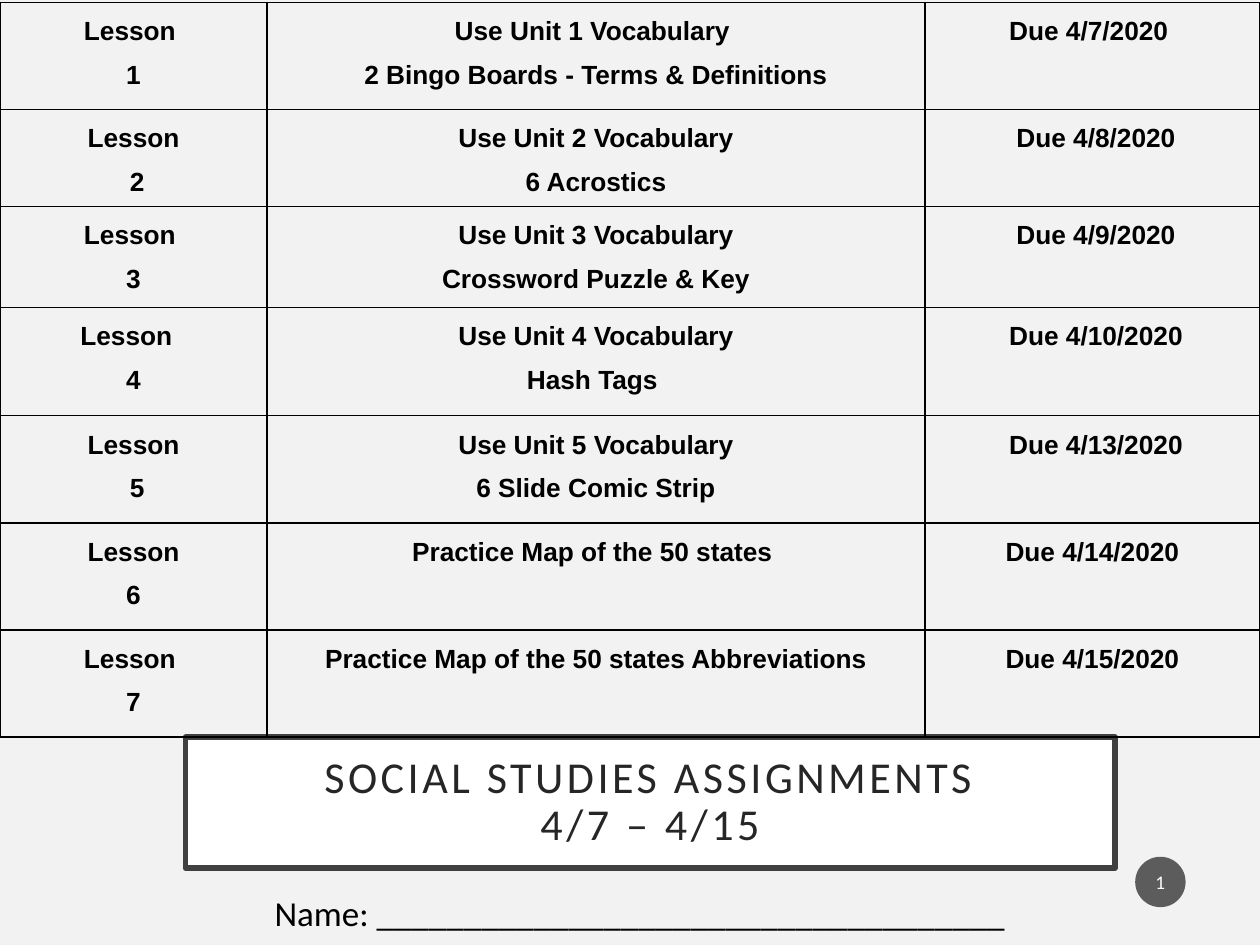
from lxml.etree import SubElement as Sub
from pptx import Presentation
from pptx.dml.color import RGBColor
from pptx.enum.shapes import MSO_SHAPE as Shape
from pptx.enum.text import MSO_ANCHOR as Anchor, PP_ALIGN as Align
from pptx.oxml.ns import qn
from pptx.util import Pt

COLORS = {"page": "F2F2F2", "white": "FFFFFF", "frame": "404040",
          "title": "262626", "badge": "1D1D1D", "black": "000000"}

COLS = [152.64, 375.84, 191.52]
ROWS = [61.2, 55.44, 57.6, 61.92, 61.2, 61.2, 61.2]
LESSONS = [
    ("Lesson \n1", "Use Unit 1 Vocabulary \n2 Bingo Boards - Terms & Definitions", "Due 4/7/2020 "),
    ("Lesson\n 2", "Use Unit 2 Vocabulary\n6 Acrostics", " Due 4/8/2020"),
    ("Lesson \n3", "Use Unit 3 Vocabulary\nCrossword Puzzle & Key", " Due 4/9/2020"),
    ("Lesson  \n4", "Use Unit 4 Vocabulary\nHash Tags ", " Due 4/10/2020"),
    ("Lesson\n 5", "Use Unit 5 Vocabulary\n6 Slide Comic Strip", " Due 4/13/2020"),
    ("Lesson\n6", "Practice Map of the 50 states ", "Due 4/14/2020"),
    ("Lesson \n7", "Practice Map of the 50 states Abbreviations", "Due 4/15/2020"),
]


def rgb(name):
    return RGBColor.from_string(COLORS[name])


def pad(item, side, top):
    """Set equal side margins and equal top and bottom margins."""
    item.margin_left = item.margin_right = Pt(side)
    item.margin_top = item.margin_bottom = Pt(top)


def write(frame, text, size, color, face="Calibri", bold=False, gap=None):
    frame.text = text
    for para in frame.paragraphs:
        para.alignment = Align.CENTER
        para.line_spacing = gap
        font = para.font
        font.name, font.size, font.bold = face, Pt(size), bold
        font.color.rgb = rgb(color)


def add_border(cell):
    props = cell._tc.get_or_add_tcPr()
    for spot, side in enumerate(("lnL", "lnR", "lnT", "lnB")):
        line = props.makeelement(qn(f"a:{side}"), {"w": str(Pt(1))})
        fill = Sub(line, qn("a:solidFill"))
        Sub(fill, qn("a:srgbClr"), val=COLORS["black"])
        props.insert(spot, line)


def add_plan(slide, x, y):
    """Place the table of lessons, tasks and due dates."""
    table = slide.shapes.add_table(len(ROWS), len(COLS), Pt(x), Pt(y),
                                   Pt(sum(COLS)), Pt(sum(ROWS))).table
    table.first_row = table.horz_banding = False
    for col, width in zip(table.columns, COLS):
        col.width = Pt(width)
    for row, height, lesson in zip(table.rows, ROWS, LESSONS):
        row.height = Pt(height)
        for cell, text in zip(row.cells, lesson):
            cell.fill.background()
            pad(cell, 2.16, 0)
            write(cell.text_frame, text, 15, "black", "Arial", True, 1.5)
            add_border(cell)


def add_form(slide, kind, x, y, w, h, fill):
    form = slide.shapes.add_shape(kind, Pt(x), Pt(y), Pt(w), Pt(h))
    form.shadow.inherit = False
    form.fill.solid()
    form.fill.fore_color.rgb = rgb(fill)
    form.text_frame.word_wrap = True
    form.text_frame.vertical_anchor = Anchor.MIDDLE
    return form


def add_title(slide, x, y, w, h):
    form = add_form(slide, Shape.RECTANGLE, x, y, w, h, "white")
    form.line.color.rgb = rgb("frame")
    form.line.width = Pt(3)
    frame = form.text_frame
    pad(frame, 21.6, 14.4)
    write(frame, "SOCIAL STUDIES ASSIGNMENTS\v4/7 – 4/15", 25.2, "title", gap=0.9)
    for run in frame.paragraphs[0].runs:
        run.font._element.set("spc", "200")


def add_badge(slide, x, y, size):
    """Place the round page number."""
    form = add_form(slide, Shape.OVAL, x, y, size, size, "badge")
    form.line.fill.background()
    tint = form._element.spPr.find(qn("a:solidFill"))[0]
    Sub(tint, qn("a:alpha"), val="70000")
    pad(form.text_frame, 1.44, 3.6)
    write(form.text_frame, "1", 11, "white")


def add_name(slide, x, y, w, h):
    frame = slide.shapes.add_textbox(Pt(x), Pt(y), Pt(w), Pt(h)).text_frame
    frame.word_wrap = False
    write(frame, "Name: " + "_" * 36, 20, "black")


def main():
    deck = Presentation()
    deck.slide_width, deck.slide_height = Pt(720), Pt(540)
    slide = deck.slides.add_slide(deck.slide_layouts[6])
    slide.background.fill.solid()
    slide.background.fill.fore_color.rgb = rgb("page")
    add_title(slide, 105.84, 421.2, 531.36, 74.88)
    add_badge(slide, 648.72, 489.6, 28.8)
    add_plan(slide, 0, 1.44)
    add_name(slide, 129.6, 506.16, 472.32, 31.68)
    deck.save("out.pptx")


if __name__ == "__main__":
    main()
